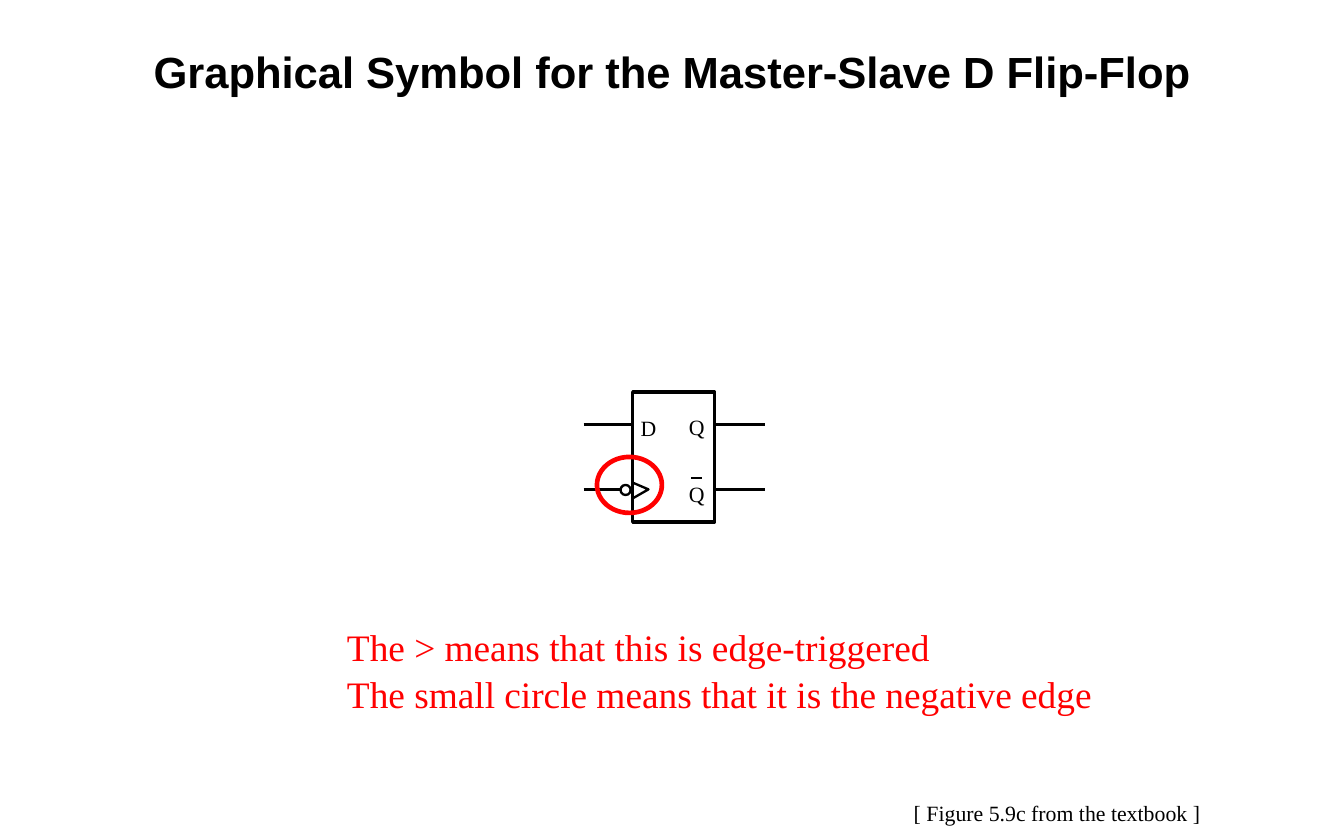
from lxml.etree import SubElement
from pptx import Presentation
from pptx.dml.color import RGBColor
from pptx.enum.shapes import MSO_CONNECTOR, MSO_SHAPE
from pptx.enum.text import PP_ALIGN
from pptx.oxml.ns import qn
from pptx.util import Inches, Pt

THEME = {
    "ink": "000000", "paper": "FFFFFF", "accent": "FF0000",
    "heading": "Arial", "body": "Times New Roman",
    "title": 28, "note": 24, "label": 14,
    "overbar": 1.38, "wire": 1.5, "outline": 2.25, "highlight": 3,
    "leading": 1.05,
}

TITLE = "Graphical Symbol for the Master-Slave D Flip-Flop"
NOTES = ["The > means that this is edge-triggered",
         "The small circle means that it is the negative edge"]
CAPTION = "[ Figure 5.9c from the textbook ]"

BODY = (5.65, 3.5, 0.73, 1.16)
BUBBLE = (5.54, 4.33, 0.09, 0.09)
HIGHLIGHT = (5.33, 4.08, 0.58, 0.5)
CLOCK_WEDGE = [(5.65, 4.45), (5.79, 4.37), (5.65, 4.31)]
PIN_LABELS = [("D", 5.72, 3.69), ("Q", 6.15, 3.68), ("Q", 6.15, 4.28)]
UPPER_PIN, LOWER_PIN = 3.79, 4.37
WIRE_LEFT, WIRE_RIGHT = 5.21, 6.83


def color(name):
    return RGBColor.from_string(THEME[name])


def set_line(shape, ink, width):
    shape.line.color.rgb = color(ink)
    shape.line.width = Pt(THEME[width])


def add_outline(slide, kind, box, ink="ink", width="wire", fill=None):
    shape = slide.shapes.add_shape(kind, *map(Inches, box))
    shape.shadow.inherit = False
    if fill:
        shape.fill.solid()
        shape.fill.fore_color.rgb = color(fill)
    else:
        shape.fill.background()
    set_line(shape, ink, width)
    return shape


def add_line(slide, start, end, width="wire"):
    line = slide.shapes.add_connector(
        MSO_CONNECTOR.STRAIGHT, *map(Inches, (*start, *end)))
    set_line(line, "ink", width)
    SubElement(line._element.spPr, qn("a:effectLst"))
    return line


def add_wedge(slide, points):
    builder = slide.shapes.build_freeform(*map(Inches, points[0]), scale=1.0)
    builder.add_line_segments(
        [tuple(map(Inches, point)) for point in points[1:]], close=False)
    wedge = builder.convert_to_shape()
    wedge.shadow.inherit = False
    wedge.fill.background()
    set_line(wedge, "ink", "wire")


def add_text(slide, lines, box, size="label", font="body", ink="ink",
             bold=False, align=PP_ALIGN.LEFT, inset=True):
    frame = slide.shapes.add_textbox(*map(Inches, box)).text_frame
    frame.word_wrap = True
    if not inset:
        frame.margin_left = frame.margin_right = 0
        frame.margin_top = frame.margin_bottom = 0
    for index, text in enumerate(lines):
        paragraph = frame.paragraphs[0] if index == 0 else frame.add_paragraph()
        paragraph.alignment = align
        paragraph.line_spacing = THEME["leading"]
        run = paragraph.add_run()
        run.text = text
        run.font.name = THEME[font]
        run.font.size = Pt(THEME[size])
        run.font.bold = bold
        run.font.color.rgb = color(ink)


def draw_flip_flop(slide):
    left, right = BODY[0], BODY[0] + BODY[2]
    add_outline(slide, MSO_SHAPE.RECTANGLE, BODY, width="outline", fill="paper")
    for label, x, y in PIN_LABELS:
        add_text(slide, [label], (x, y, 0.19, 0.24), inset=False)
    add_line(slide, (6.17, 4.27), (6.27, 4.27), "overbar")
    add_wedge(slide, CLOCK_WEDGE)
    bubble = add_outline(slide, MSO_SHAPE.OVAL, BUBBLE)

    add_line(slide, (WIRE_LEFT, UPPER_PIN), (left, UPPER_PIN))
    for pin in (UPPER_PIN, LOWER_PIN):
        add_line(slide, (right, pin), (WIRE_RIGHT, pin))
    # An oval has eight connection sites; number 2 is its left side.
    clock = add_line(slide, (WIRE_LEFT, LOWER_PIN), (BUBBLE[0], LOWER_PIN))
    clock.end_connect(bubble, 2)
    clock.end_x, clock.end_y = Inches(BUBBLE[0]), Inches(LOWER_PIN)


def main():
    presentation = Presentation()
    presentation.slide_width, presentation.slide_height = Inches(12), Inches(7.5)
    slide = presentation.slides.add_slide(presentation.slide_layouts[6])

    draw_flip_flop(slide)
    add_text(slide, [CAPTION], (8.06, 7.08, 2.78, 0.34))
    add_text(slide, [TITLE], (1, 0.33, 10, 0.67), size="title",
             font="heading", bold=True, align=PP_ALIGN.CENTER)
    add_outline(slide, MSO_SHAPE.OVAL, HIGHLIGHT, ink="accent", width="highlight")
    add_text(slide, NOTES, (3, 5.5, 6.96, 0.91), size="note", ink="accent")
    presentation.save("out.pptx")


if __name__ == "__main__":
    main()
